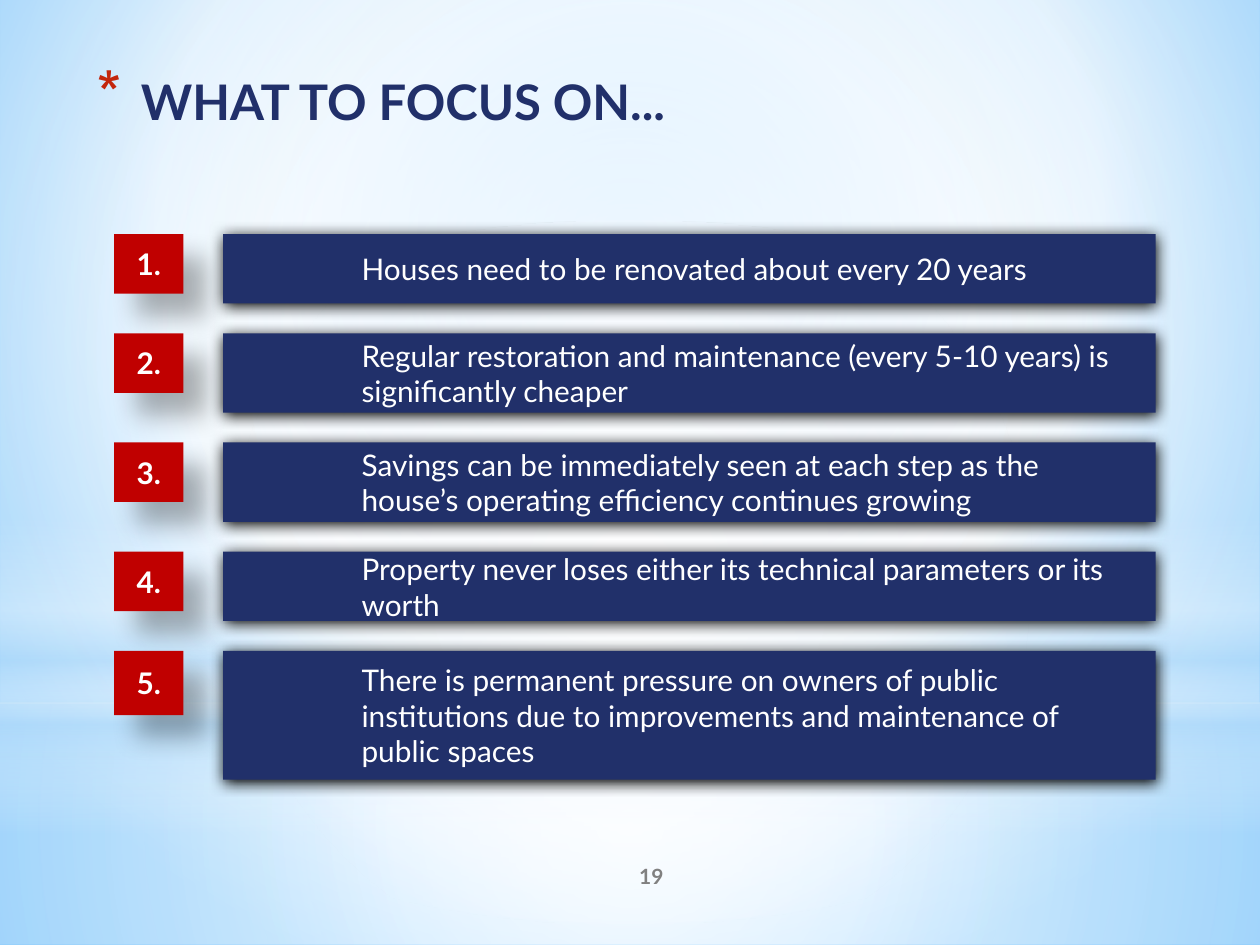
from pptx import Presentation
from pptx.dml.color import RGBColor
from pptx.enum.shapes import MSO_SHAPE as Shape
from pptx.enum.text import MSO_ANCHOR as Anchor, PP_ALIGN as Align
from pptx.oxml import parse_xml
from pptx.oxml.ns import nsdecls, qn
from pptx.util import Cm, Inches, Pt

FONT = "Lato"
COLORS = {"navy": "21306A", "red": "C00000", "bullet": "C3260C", "gray": "808080",
          "white": "FFFFFF", "black": "000000", "sky": "B4DCFA",
          "edge": "9ED5FF", "deep": "5BB9FF"}

TITLE = "WHAT TO FOCUS ON..."
PAGE_NUMBER = "19"
POINTS = [
    ("Houses need to be renovated about every 20 years", 7, 6),
    ("Regular restoration and maintenance (every 5-10 years) is significantly cheaper", 8, 6),
    ("Savings can be immediately seen at each step as the house’s operating efficiency "
     "continues growing", 8, 6),
    ("Property never loses either its technical parameters or its worth", 7, 6),
    ("There is permanent pressure on owners of public institutions due to improvements "
     "and maintenance of public spaces", 13, 6.5),
]

CENTER = (50, 50, 50, 50)
BACKGROUND = [(0, "edge", 100), (60, "white", 100), (100, "deep", 100)]
GLOWS = [
    (Shape.RECTANGLE, 5.58, 1.92, CENTER,
     [(0, "white", 91), (37, "white", 76), (100, "sky", 79)]),
    (Shape.RECTANGLE, 0, 5.58, CENTER,
     [(0, "white", 89), (48, "white", 62), (100, "sky", 79)]),
    (Shape.RECTANGLE, 4.12, 2.5, None,
     [(0, "white", 0), (29, "white", 30), (45, "sky", 40),
      (55, "white", 26), (65, "sky", 60), (100, "white", 0)]),
    (Shape.OVAL, 1.75, 5.58, CENTER, [(0, "white", 100), (56, "white", 0)]),
]

CELL = Cm(0.2)
GAP = 3
LIST_TOP = Cm(4.72)
BADGE_LEFT, BADGE_COLUMNS = Cm(2.3), 7
BAR_LEFT, BAR_COLUMNS = Cm(4.5), 94
BADGE_SHADOW = (30, 15, 18, 45)
BAR_SHADOW = (100, 8.5, 1, 90)


def rgb(name):
    return RGBColor.from_string(COLORS[name])


def set_gradient(fill, parent, stops, focus):
    fill.solid()
    marks = "".join(
        f'<a:gs pos="{pos * 1000}"><a:srgbClr val="{COLORS[name]}">'
        f'<a:alpha val="{alpha * 1000}"/></a:srgbClr></a:gs>'
        for pos, name, alpha in stops)
    if focus:
        sides = " ".join(f'{side}="{share * 1000}"' for side, share in zip("ltrb", focus))
        direction = f'<a:path path="circle"><a:fillToRect {sides}/></a:path>'
    else:
        direction = '<a:lin ang="5400000" scaled="0"/>'
    gradient = parse_xml(f'<a:gradFill {nsdecls("a")} rotWithShape="1">'
                         f'<a:gsLst>{marks}</a:gsLst>{direction}</a:gradFill>')
    parent.replace(parent.find(qn("a:solidFill")), gradient)


def add_plain(page, kind, left, top, width, height):
    shape = page.shapes.add_shape(kind, left, top, width, height)
    shape.shadow.inherit = False
    shape.line.fill.background()
    return shape


def add_shadow(shape, alpha, blur, distance, angle):
    shape.element.spPr.find(qn("a:effectLst")).append(parse_xml(
        f'<a:outerShdw {nsdecls("a")} blurRad="{Pt(blur)}" dist="{Pt(distance)}" '
        f'dir="{angle * 60000}" algn="ctr" rotWithShape="0">'
        f'<a:srgbClr val="{COLORS["black"]}"><a:alpha val="{alpha * 1000}"/></a:srgbClr>'
        f'</a:outerShdw>'))


def write(shape, text, size, color, bold=False, align=Align.LEFT, anchor=Anchor.MIDDLE):
    frame = shape.text_frame
    frame.word_wrap = True
    frame.vertical_anchor = anchor
    para = frame.paragraphs[0]
    para.text = text
    para.alignment = align
    para.font.name, para.font.size, para.font.bold = FONT, Pt(size), bold
    para.font.color.rgb = rgb(color)
    return para


def indent(para, margin, first=0):
    props = para._p.get_or_add_pPr()
    props.set("marL", str(Inches(margin)))
    props.set("indent", str(Inches(first)))
    return props


def add_backdrop(deck, page):
    fill = page.background.fill
    fill.solid()
    holder = page.element.cSld.find(qn("p:bg")).find(qn("p:bgPr"))
    set_gradient(fill, holder, BACKGROUND, (20, 10, 20, 60))
    for kind, top, height, focus, stops in GLOWS:
        glow = add_plain(page, kind, 0, Inches(top), deck.slide_width, Inches(height))
        set_gradient(glow.fill, glow.element.spPr, stops, focus)


def add_title(page):
    box = page.shapes.add_textbox(Inches(0.67), Inches(0.52), Inches(8.58), Inches(0.98))
    props = indent(write(box, TITLE, 28, "navy", True, anchor=Anchor.TOP), 0.35, -0.35)
    bullet = (f'<a:buClr {nsdecls("a")}><a:srgbClr val="{COLORS["bullet"]}"/></a:buClr>',
              f'<a:buSzPct {nsdecls("a")} val="128000"/>',
              f'<a:buChar {nsdecls("a")} char="*"/>')
    for position, part in enumerate(bullet):
        props.insert(position, parse_xml(part))


def add_points(page):
    top = LIST_TOP
    for number, (text, bar_rows, badge_rows) in enumerate(POINTS, 1):
        badge = add_plain(page, Shape.RECTANGLE, BADGE_LEFT, top,
                          BADGE_COLUMNS * CELL, int(badge_rows * CELL))
        bar = add_plain(page, Shape.RECTANGLE, BAR_LEFT, top,
                        BAR_COLUMNS * CELL, bar_rows * CELL)
        for shape, color, shadow in ((badge, "red", BADGE_SHADOW), (bar, "navy", BAR_SHADOW)):
            shape.fill.solid()
            shape.fill.fore_color.rgb = rgb(color)
            add_shadow(shape, *shadow)
        write(badge, f"{number}.", 17, "white", True, Align.CENTER)
        indent(write(bar, text, 17, "white"), 1)
        top += (bar_rows + GAP) * CELL


def main():
    deck = Presentation()
    deck.slide_width, deck.slide_height = Inches(10), Inches(7.5)
    page = deck.slides.add_slide(deck.slide_layouts[6])
    add_backdrop(deck, page)
    add_title(page)
    add_points(page)
    footer = page.shapes.add_textbox(Inches(4.17), Inches(6.75), Inches(2), Inches(0.4))
    write(footer, PAGE_NUMBER, 12, "gray", True, Align.CENTER)
    deck.save("out.pptx")


if __name__ == "__main__":
    main()
